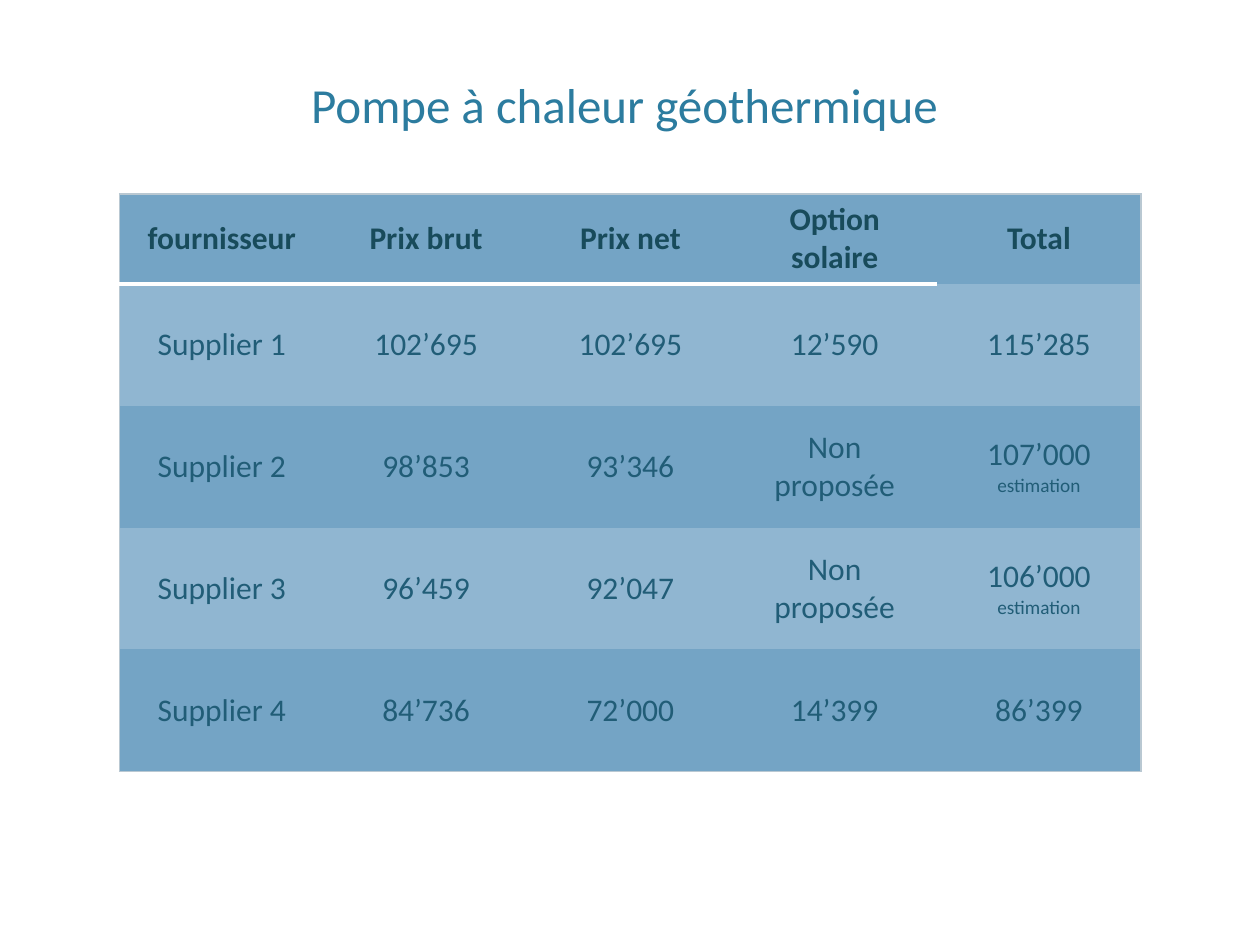
from dataclasses import dataclass

from lxml import etree
from pptx import Presentation
from pptx.dml.color import RGBColor
from pptx.enum.text import MSO_ANCHOR, PP_ALIGN
from pptx.oxml.ns import qn
from pptx.util import Pt

CENTER = PP_ALIGN.CENTER
MIDDLE, BOTTOM = MSO_ANCHOR.MIDDLE, MSO_ANCHOR.BOTTOM
NO_STYLE_NO_GRID = "{2D5ABB26-0587-4C30-8999-92F81FD0307C}"


@dataclass(frozen=True)
class Theme:
    font: str = "Calibri"
    title: str = "2C7C9F"
    header: str = "184B5B"
    body: str = "215D77"
    band_dark: str = "74A4C5"
    band_light: str = "90B6D1"
    frame: str = "B9C8D2"
    rule: str = "FFFFFF"
    title_size: int = 28
    cell_size: int = 18
    note_size: int = 11


THEME = Theme()


def add_text(p, text, size, color, bold=False):
    p.alignment = CENTER
    r = p.add_run()
    r.text = text
    r.font.name = THEME.font
    r.font.size = Pt(size)
    r.font.bold = bold
    r.font.color.rgb = RGBColor.from_string(color)


def add_border(cell, side, color, width):
    """Draw one cell edge; call in the order L, R, T, B and before the fill."""
    ln = etree.SubElement(cell._tc.get_or_add_tcPr(), qn(f"a:ln{side}"), w=str(Pt(width)))
    fill = etree.SubElement(ln, qn("a:solidFill"))
    etree.SubElement(fill, qn("a:srgbClr"), val=color)


prs = Presentation()
prs.slide_width, prs.slide_height = Pt(720), Pt(540)
s = prs.slides.add_slide(prs.slide_layouts[6])

# Title
title = s.shapes.add_textbox(Pt(43.2), Pt(22.3), Pt(633.6), Pt(57.6))
tf = title.text_frame
tf.word_wrap = True
tf.vertical_anchor = BOTTOM
add_text(tf.paragraphs[0], "Pompe à chaleur géothermique ", THEME.title_size, THEME.title)

# Price table: a second line in a cell is a small note
ROWS = [
    ["fournisseur", "Prix brut", "Prix net", "Option solaire", "Total"],
    ["Supplier 1", "102’695", "102’695", "12’590", "115’285"],
    ["Supplier 2", "98’853", "93’346", "Non proposée", "107’000\nestimation"],
    ["Supplier 3", "96’459", "92’047", "Non proposée", "106’000\nestimation"],
    ["Supplier 4", "84’736", "72’000", "14’399", "86’399"],
]
HEADER_H, ROW_H, COL_W = 51.2, 69.7, 116.75
last_row, last_col = len(ROWS) - 1, len(ROWS[0]) - 1

frame = s.shapes.add_table(
    len(ROWS), len(ROWS[0]), Pt(68.4), Pt(110.9),
    Pt(COL_W * len(ROWS[0])), Pt(HEADER_H + ROW_H * last_row))
table = frame.table
table.horz_banding = False
table._tbl.tblPr.find(qn("a:tableStyleId")).text = NO_STYLE_NO_GRID

for col in table.columns:
    col.width = Pt(COL_W)

for i, values in enumerate(ROWS):
    is_header = i == 0
    table.rows[i].height = Pt(HEADER_H if is_header else ROW_H)
    for j, value in enumerate(values):
        cell = table.cell(i, j)
        cell.vertical_anchor = MIDDLE

        outer_edges = {"L": j == 0, "R": j == last_col, "T": is_header, "B": i == last_row}
        for side, is_outer in outer_edges.items():
            if is_outer:
                add_border(cell, side, THEME.frame, 1)
        if is_header and j < last_col:
            add_border(cell, "B", THEME.rule, 2.5)

        cell.fill.solid()
        band = THEME.band_light if i % 2 else THEME.band_dark
        cell.fill.fore_color.rgb = RGBColor.from_string(band)

        tf = cell.text_frame
        for k, line in enumerate(value.split("\n")):
            p = tf.add_paragraph() if k else tf.paragraphs[0]
            size = THEME.note_size if k else THEME.cell_size
            color = THEME.header if is_header else THEME.body
            add_text(p, line, size, color, bold=is_header)

prs.save("out.pptx")
